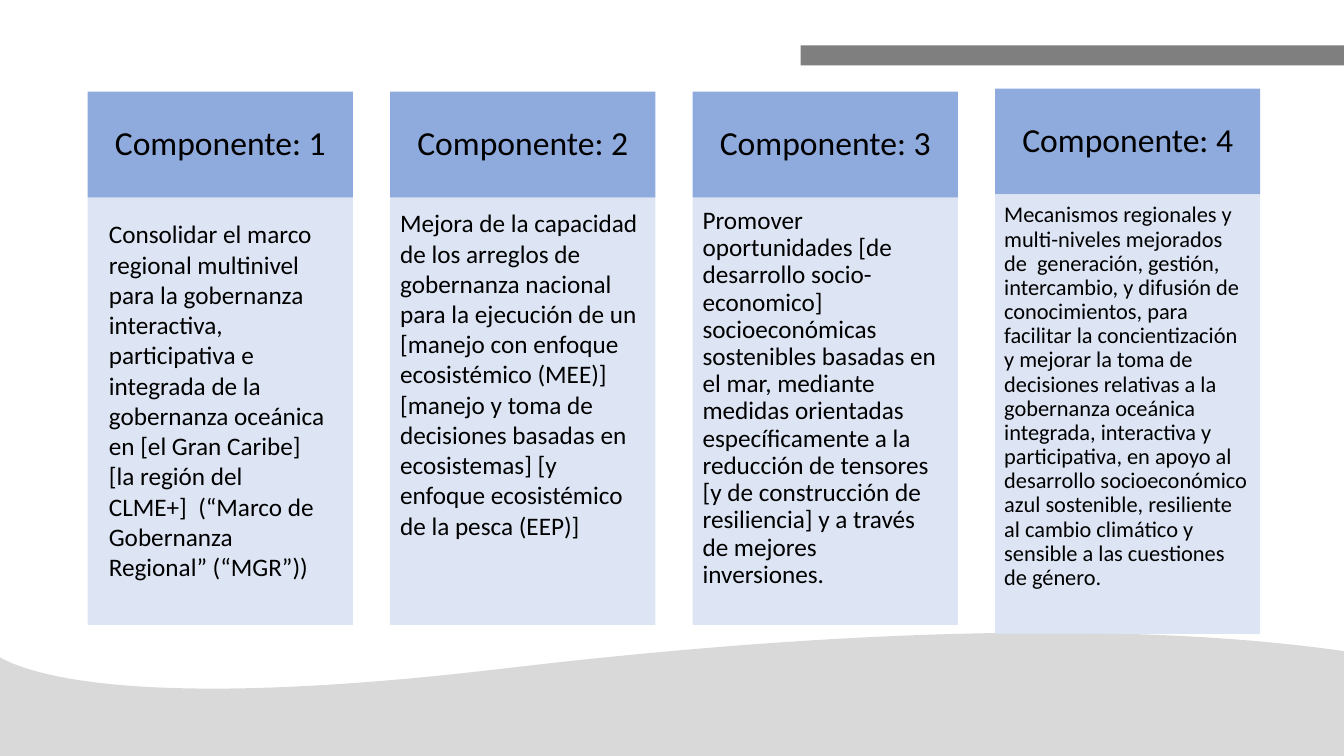
import pptx
import pptx.util
import pptx.dml.color
import pptx.enum.shapes
import pptx.enum.text
import pptx.oxml.ns
from lxml import etree

Inches = pptx.util.Inches
Pt = pptx.util.Pt
ALIGN = pptx.enum.text.PP_ALIGN
ANCHOR = pptx.enum.text.MSO_ANCHOR
COLORS = {"wave": "D9D9D9", "bar": "7F7F7F", "head": "8FAADC",
          "body": "DAE3F3", "text": "000000"}


def paint(shape, color):
    shape.shadow.inherit = False
    shape.fill.solid()
    shape.fill.fore_color.rgb = pptx.dml.color.RGBColor.from_string(COLORS[color])
    shape.line.fill.background()


def add_box(left, top, width, height, color, text="", size=18, pads=(0, 0, 0, 0),
            align=ALIGN.LEFT, anchor=ANCHOR.TOP, space=1.0):
    box = slide.shapes.add_shape(pptx.enum.shapes.MSO_SHAPE.RECTANGLE, Inches(left),
                                 Inches(top), Inches(width), Inches(height))
    paint(box, color)
    if text:
        frame = box.text_frame
        frame.word_wrap = True
        frame.vertical_anchor = anchor
        frame.margin_left, frame.margin_top, frame.margin_right, frame.margin_bottom = (
            Inches(pad) for pad in pads)
        para = frame.paragraphs[0]
        para.alignment = align
        para.line_spacing = space
        run = para.add_run()
        run.text = text
        run.font.name = "Calibri"
        run.font.size = Pt(size)
        run.font.color.rgb = pptx.dml.color.RGBColor.from_string(COLORS["text"])
    return box


deck = pptx.Presentation()
deck.slide_width = Inches(13.33)
deck.slide_height = Inches(7.5)
slide = deck.slides.add_slide(deck.slide_layouts[6])

curves = [
    [(13.33, 6.46), (11.65, 6.22), (9.02, 6.16), (5.02, 6.63)],
    [(5.02, 6.63), (1.33, 7.07), (0.26, 6.68), (-0.02, 6.51)],
]
steps = 40
points = [(13.33, 6.46)]
for curve in curves:
    for step in range(1, steps + 1):
        t = step / steps
        weights = ((1 - t) ** 3, 3 * t * (1 - t) ** 2, 3 * t ** 2 * (1 - t), t ** 3)
        points.append(tuple(sum(w * p[axis] for w, p in zip(weights, curve))
                            for axis in (0, 1)))
points.append((-0.02, 7.5))
pen = slide.shapes.build_freeform(Inches(13.33), Inches(7.5), scale=1.0)
pen.add_line_segments([(Inches(x), Inches(y)) for x, y in points], close=True)
paint(pen.convert_to_shape(), "wave")

add_box(7.94, 0.45, 5.4, 0.2, "bar")

narrow = (0.1, 0.1, 0.14, 0.16)
cards = [
    (0.91, 4.24, 18, 1.0, (0.21, 0.21, 0.28, 0.32),
     "Consolidar el marco regional multinivel para la gobernanza interactiva, "
     "participativa e integrada de la gobernanza oceánica en [el Gran Caribe]"
     "[la región del CLME+]  (“Marco de Gobernanza Regional” (“MGR”))"),
    (0.91, 4.24, 18, 1.0, narrow,
     "Mejora de la capacidad de los arreglos de gobernanza nacional para la "
     "ejecución de un [manejo con enfoque ecosistémico (MEE)] [manejo y toma de "
     "decisiones basadas en ecosistemas] [y enfoque ecosistémico de la pesca (EEP)]"),
    (0.91, 4.24, 18, 0.9, narrow,
     "Promover oportunidades [de desarrollo socio-economico] socioeconómicas "
     "sostenibles basadas en el mar, mediante medidas orientadas específicamente a "
     "la reducción de tensores [y de construcción de resiliencia] y a través de "
     "mejores inversiones."),
    (0.88, 4.36, 16, 0.9, (0.09, 0.09, 0.12, 0.14),
     "Mecanismos regionales y multi-niveles mejorados de  generación, gestión, "
     "intercambio, y difusión de conocimientos, para facilitar la concientización y "
     "mejorar la toma de decisiones relativas a la gobernanza oceánica integrada, "
     "interactiva y participativa, en apoyo al desarrollo socioeconómico azul "
     "sostenible, resiliente al cambio climático y sensible a las cuestiones de género."),
]
wide, tall, pitch = 2.63, 1.05, 3.0
for i, (top, height, size, space, pads, text) in enumerate(cards):
    left = 0.87 + i * pitch
    add_box(left, top, wide, tall, "head", f"Componente: {i + 1}", 24,
            (0.19, 0.11, 0.19, 0.11), ALIGN.CENTER, ANCHOR.MIDDLE, 0.9)
    body = add_box(left, top + tall, wide, height, "body", text, size, pads, space=space)
    tint = body.fill._xPr.find(".//" + pptx.oxml.ns.qn("a:srgbClr"))
    etree.SubElement(tint, pptx.oxml.ns.qn("a:alpha"), val="90000")

deck.save("out.pptx")
